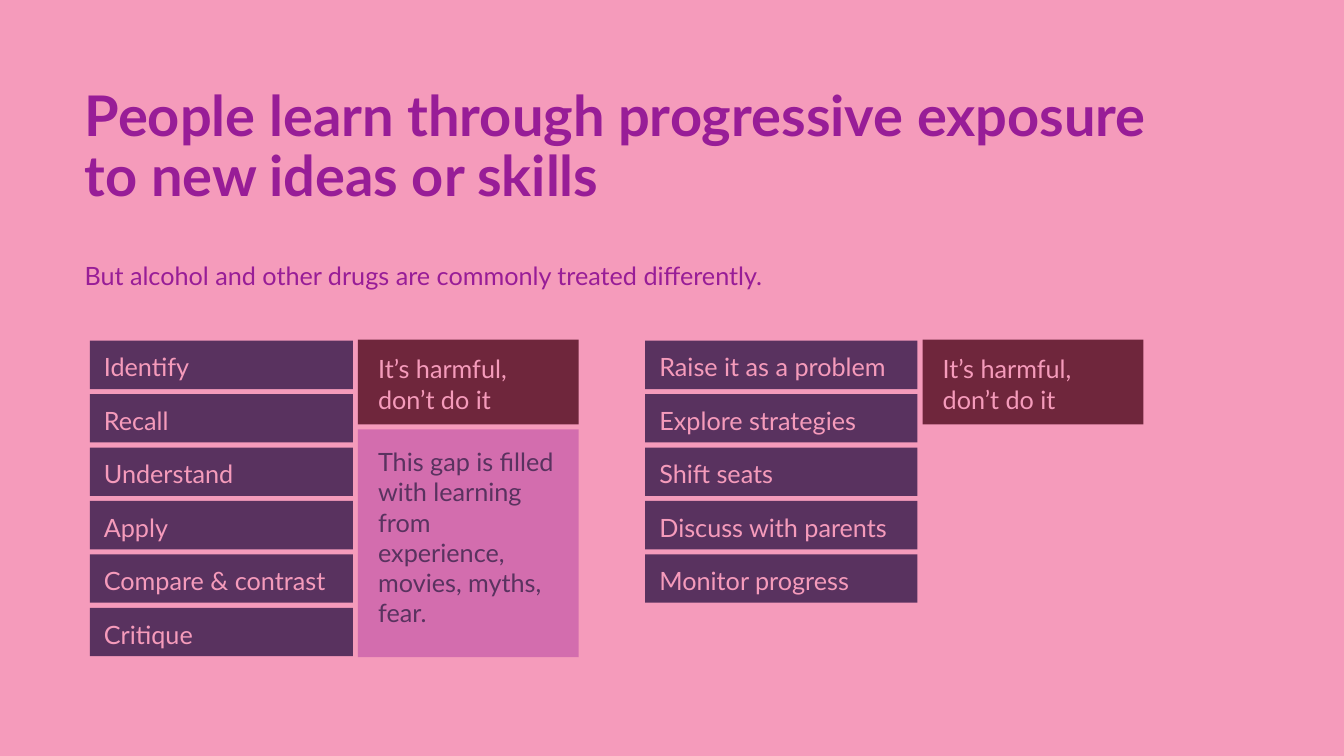
from pptx import Presentation
from pptx import util as u
from pptx.dml.color import RGBColor
from pptx.enum import shapes, text
from pptx.oxml.ns import qn
from lxml import etree

PINK = RGBColor(0xF5, 0x9B, 0xBB)
VIOLET = RGBColor(0x98, 0x1D, 0x97)
PLUM = RGBColor(0x59, 0x32, 0x5F)
WINE = RGBColor(0x6F, 0x26, 0x3C)

LEARN = ["Identify", "Recall", "Understand", "Apply", "Compare & contrast", "Critique"]
SEATS = ["Raise it as a problem", "Explore strategies", "Shift seats",
         "Discuss with parents", "Monitor progress"]
HARM = "It’s harmful, don’t do it"
GAP = "This gap is filled with learning from experience, movies, myths, fear."


class Page:
    """Hold the slide and its style, and draw each kind of element."""

    font = "Lato"
    size = 18
    top = 3.38
    step = 0.53

    def __init__(self, deck):
        self.slide = deck.slides.add_slide(deck.slide_layouts[5])
        fill = self.slide.background.fill
        fill.solid()
        fill.fore_color.rgb = PINK

    def letter(self, shape, words, color, size=None, bold=False):
        frame = shape.text_frame
        frame.text = words
        frame.word_wrap = True
        line = frame.paragraphs[0]
        line.alignment = text.PP_ALIGN.LEFT
        for run in line.runs:
            run.font.name = self.font
            run.font.size = u.Pt(size or self.size)
            run.font.bold = bold
            run.font.color.rgb = color
        return frame

    def title(self, words, left, top, width, height):
        head = self.slide.shapes.title
        head.left, head.top = u.Inches(left), u.Inches(top)
        head.width, head.height = u.Inches(width), u.Inches(height)
        frame = self.letter(head, words, VIOLET, 40, True)
        frame.auto_size = text.MSO_AUTO_SIZE.NONE
        frame.vertical_anchor = text.MSO_ANCHOR.TOP
        frame.paragraphs[0].line_spacing = 0.9

    def label(self, words, *place):
        box = self.slide.shapes.add_textbox(*map(u.Inches, place))
        self.letter(box, words, VIOLET)

    def block(self, words, place, fill, color=PINK, inset=0.2, head=0.14, alpha=None):
        rect = self.slide.shapes.add_shape(
            shapes.MSO_SHAPE.RECTANGLE, *map(u.Inches, place))
        rect.shadow.inherit = False
        rect.line.fill.background()
        rect.fill.solid()
        rect.fill.fore_color.rgb = fill
        if alpha:
            tint = rect.element.spPr.find(qn("a:solidFill"))[0]
            etree.SubElement(tint, qn("a:alpha")).set("val", str(alpha * 1000))
        frame = self.letter(rect, words, color)
        frame.vertical_anchor = text.MSO_ANCHOR.TOP
        frame.margin_left = frame.margin_right = u.Inches(inset)
        frame.margin_top = u.Inches(head)
        frame.margin_bottom = 0

    def stack(self, steps, left, width):
        for row, words in enumerate(steps):
            place = (left, self.top + row * self.step, width, 0.48)
            self.block(words, place, PLUM, inset=0.14, head=0.11)


def main():
    deck = Presentation()
    deck.slide_width, deck.slide_height = u.Inches(13.33), u.Inches(7.5)
    page = Page(deck)
    page.title("People learn through progressive exposure to new ideas or skills",
               0.74, 0.82, 11.26, 1.3)
    page.label("But alcohol and other drugs are commonly treated differently.",
               0.74, 2.53, 7.97, 0.4)
    page.stack(LEARN, 0.89, 2.61)
    page.stack(SEATS, 6.4, 2.7)
    for left in (3.55, 9.15):
        page.block(HARM, (left, 3.37, 2.19, 0.84), WINE)
    page.block(GAP, (3.55, 4.26, 2.19, 2.26), VIOLET, PLUM, head=0.17, alpha=36)
    deck.save("out.pptx")


if __name__ == "__main__":
    main()
